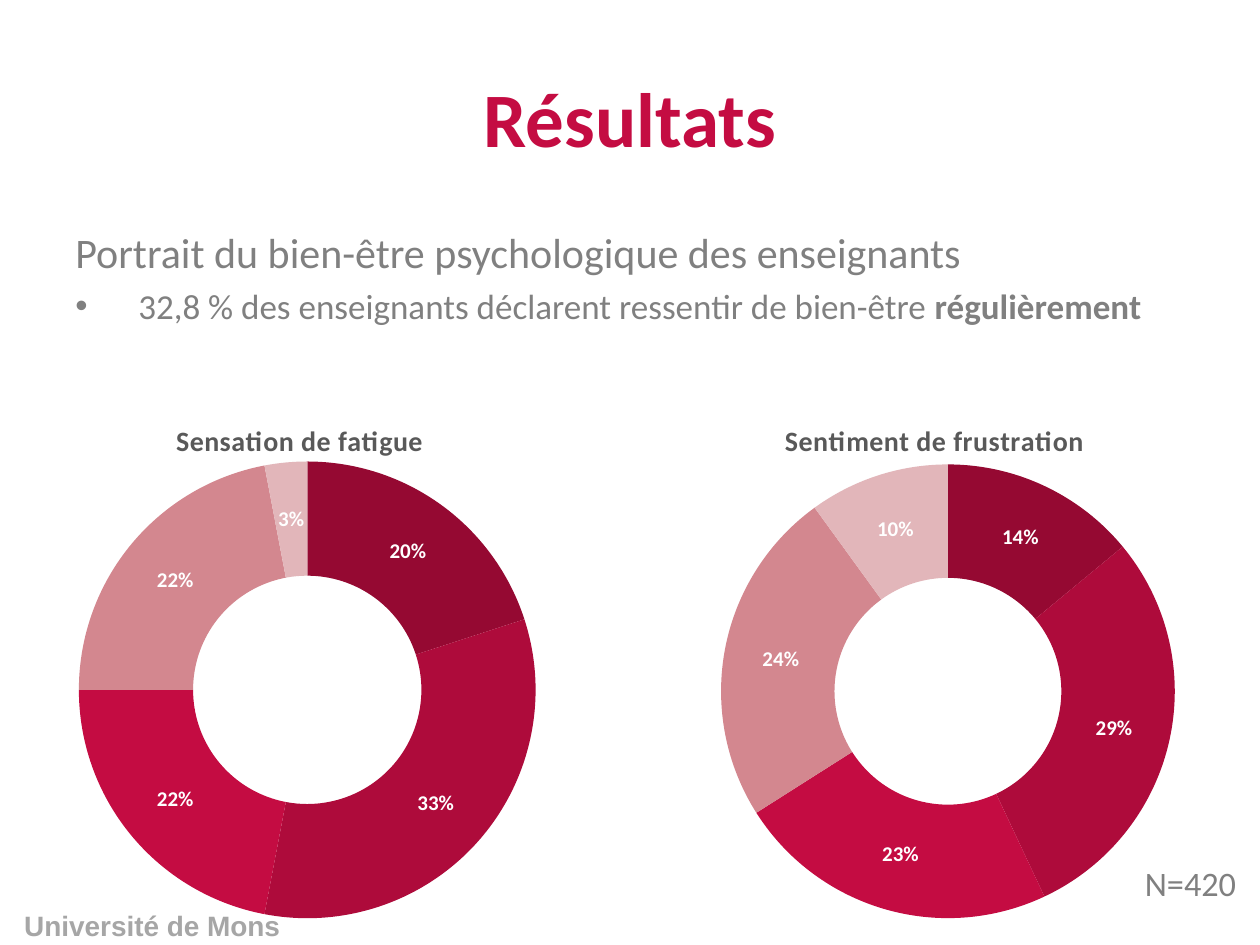
from lxml.etree import SubElement
from pptx import Presentation
from pptx.chart.data import CategoryChartData as ChartData
from pptx.dml.color import RGBColor as Rgb
from pptx.enum.chart import XL_CHART_TYPE as Kind
from pptx.enum.text import MSO_ANCHOR as Anchor, PP_ALIGN as Align
from pptx.oxml import parse_xml
from pptx.oxml.ns import nsdecls, qn
from pptx.util import Cm, Pt

HUES = {"red": "C40C42", "gray": "808080", "pale": "A6A6A6",
        "head": "595959", "white": "FFFFFF"}
RING = ["950932", "AE0B3B", HUES["red"], "D3878F", "E2B6BA"]


def style(font, size, hue, bold=False, face="Calibri"):
    """Set the look of a font."""
    font.name, font.size, font.bold = face, Pt(size), bold
    font.color.rgb = Rgb.from_string(HUES[hue])


def add_run(para, text, *look):
    """Add one styled run to a paragraph."""
    run = para.add_run()
    run.text = text
    style(run.font, *look)
    return run


def add_box(slide, box, wrap=True):
    """Add a text box and return its frame."""
    frame = slide.shapes.add_textbox(*map(Cm, box)).text_frame
    frame.word_wrap = wrap
    return frame


def add_line(slide, box, text, *look, align=Align.CENTER, wrap=True):
    """Add a box that holds one line of text."""
    frame = add_box(slide, box, wrap)
    para = frame.paragraphs[0]
    para.alignment = align
    add_run(para, text, *look)
    return frame


def add_body(slide, box):
    """Add the lead line and its bullet."""
    frame = add_box(slide, box)
    add_run(frame.paragraphs[0],
            "Portrait du bien-être psychologique des enseignants", 24, "gray")
    para = frame.add_paragraph()
    props = para._p.get_or_add_pPr()
    props.set("marL", str(Cm(1.27)))
    props.set("indent", str(Cm(-1.27)))
    SubElement(props, qn("a:buFont"), typeface="Arial")
    SubElement(props, qn("a:buChar"), char="•")
    para.space_before = Pt(4)
    add_run(para, "32,8 % des enseignants déclarent ressentir de bien-être ",
            20, "gray")
    add_run(para, "régulièrement", 20, "gray", True)


def set_place(owner, inner=False, **spots):
    """Give a chart part a fixed place, in shares of the chart."""
    for old in owner.findall(qn("c:layout")):
        owner.remove(old)
    modes = [("xMode", "edge"), ("yMode", "edge")]
    if inner:
        modes.insert(0, ("layoutTarget", "inner"))
    parts = "".join(f'<c:{key} val="{val}"/>'
                    for key, val in modes + list(spots.items()))
    node = parse_xml(f'<c:layout {nsdecls("c")}><c:manualLayout>{parts}'
                     '</c:manualLayout></c:layout>')
    text = owner.find(qn("c:tx"))
    owner.insert(0 if text is None else 1, node)


def add_ring(slide, box, title, left, vals):
    """Add a doughnut chart with a title and percent labels."""
    data = ChartData()
    data.categories = ["1", "2", "3", "4", "5"]
    data.add_series("Series 1", vals)
    chart = slide.shapes.add_chart(Kind.DOUGHNUT, *map(Cm, box), data).chart
    chart.has_legend = False
    chart.font.name, chart.font.size = "Calibri", Pt(10)
    chart.has_title = True
    head = chart.chart_title
    run = add_run(head.text_frame.paragraphs[0], title, 16, "head", True)
    run._r.get_or_add_rPr().set("spc", "40")
    head.include_in_layout = False
    set_place(head._element, x=left, y=0.07)

    plot = chart.plots[0]
    plot.vary_by_categories = True
    plot._element.find(qn("c:holeSize")).set("val", "50")
    width, height = 0.54, 0.82
    set_place(chart._chartSpace.chart.plotArea, True,
              x=(1 - width) / 2, y=0.15, w=width, h=height)
    for spot, hue in enumerate(RING):
        fill = plot.series[0].points[spot].format.fill
        fill.solid()
        fill.fore_color.rgb = Rgb.from_string(hue)
    plot.has_data_labels = True
    tags = plot.data_labels
    tags.show_percentage, tags.show_value = True, False
    tags.number_format, tags.number_format_is_linked = "0%", False
    style(tags.font, 12, "white", True)


def main():
    """Build the slide and save it."""
    deck = Presentation()
    deck.slide_width, deck.slide_height = Cm(25.4), Cm(19.05)
    slide = deck.slides.add_slide(deck.slide_layouts[6])
    add_line(slide, (-0.03, 18.19, 6.2, 0.94), "Université de Mons",
             16, "pale", True, "Arial")
    add_body(slide, (1.27, 4.45, 22.86, 12.57))
    title = add_line(slide, (1.27, 0.76, 22.86, 3.18), "Résultats",
                     44, "red", True)
    title.vertical_anchor = Anchor.MIDDLE
    add_ring(slide, (-2.39, 7.62, 17.17, 11.23), "Sensation de fatigue",
             0.34, (20, 33, 22, 22, 3))
    add_ring(slide, (10.64, 7.62, 16.94, 11.28), "Sentiment de frustration",
             0.3, (14, 29, 23, 24, 10))
    count = add_line(slide, (22.83, 17.42, 2.57, 0.94), "N=420", 19.6, "gray",
                     align=Align.LEFT, wrap=False)
    count.paragraphs[0].line_spacing = 0.8
    deck.save("out.pptx")


if __name__ == "__main__":
    main()
